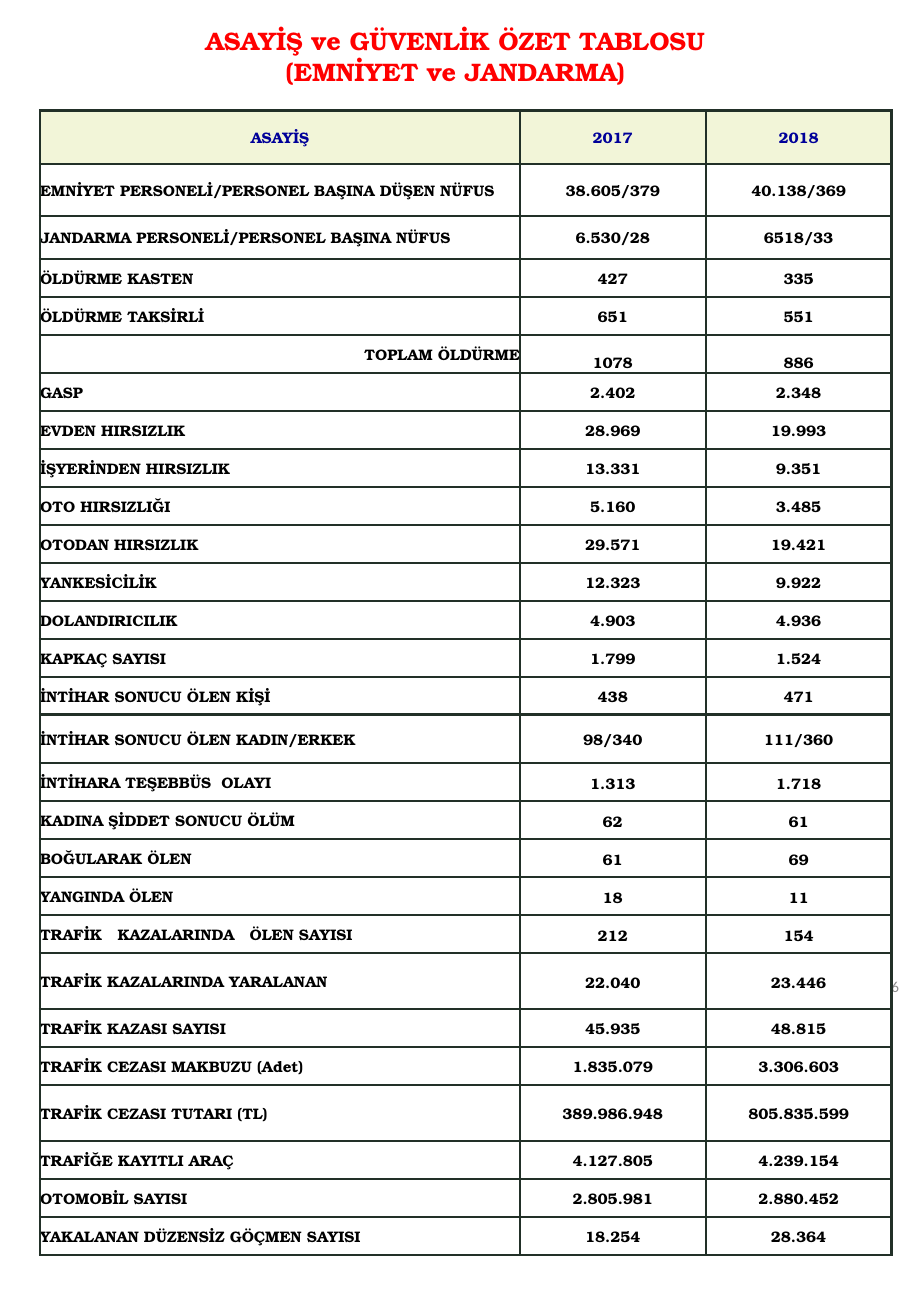
from lxml import etree
from pptx import Presentation
from pptx.dml.color import RGBColor
from pptx.enum.text import MSO_ANCHOR, PP_ALIGN
from pptx.oxml.ns import qn
from pptx.util import Inches, Pt

LEFT, CENTER, RIGHT = PP_ALIGN.LEFT, PP_ALIGN.CENTER, PP_ALIGN.RIGHT
MIDDLE, BOTTOM = MSO_ANCHOR.MIDDLE, MSO_ANCHOR.BOTTOM

RED = RGBColor(0xFF, 0x00, 0x00)
NAVY = RGBColor(0x00, 0x00, 0x99)
BLACK = RGBColor(0x00, 0x00, 0x00)
GRAY = RGBColor(0x8C, 0x8C, 0x8C)
WHITE = RGBColor(0xFF, 0xFF, 0xFF)
CREAM = RGBColor(0xF2, 0xF5, 0xD8)
BORDER = RGBColor(0x22, 0x30, 0x28)

SERIF, SANS = "TeX Gyre Bonum", "Calibri"
SLIDE_W, SLIDE_H = 7.5, 10.83
TABLE_X, TABLE_Y, TABLE_W, TABLE_H = 0.33, 0.91, 7.01, 9.42
VALUE_W = 1.53
TALL_ROWS = {0: 0.44, 1: 0.43, 2: 0.35, 15: 0.4, 21: 0.46, 24: 0.46}
TOTAL_ROW = 5
PADDED_ROWS = range(3, 27)

TITLE = ["ASAYİŞ ve GÜVENLİK ÖZET TABLOSU", "(EMNİYET ve JANDARMA)"]
ROWS = [
    ("ASAYİŞ", "2017", "2018"),
    ("EMNİYET PERSONELİ/PERSONEL BAŞINA DÜŞEN NÜFUS", "38.605/379", "40.138/369"),
    ("JANDARMA PERSONELİ/PERSONEL BAŞINA NÜFUS", "6.530/28", "6518/33"),
    ("ÖLDÜRME KASTEN", "427", "335"),
    ("ÖLDÜRME TAKSİRLİ", "651", "551"),
    ("TOPLAM ÖLDÜRME", "1078", "886"),
    ("GASP", "2.402", "2.348"),
    ("EVDEN HIRSIZLIK", "28.969", "19.993"),
    ("İŞYERİNDEN HIRSIZLIK", "13.331", "9.351"),
    ("OTO HIRSIZLIĞI", "5.160", "3.485"),
    ("OTODAN HIRSIZLIK", "29.571", "19.421"),
    ("YANKESİCİLİK", "12.323", "9.922"),
    ("DOLANDIRICILIK", "4.903", "4.936"),
    ("KAPKAÇ SAYISI", "1.799", "1.524"),
    ("İNTİHAR SONUCU ÖLEN KİŞİ", "438", "471"),
    ("İNTİHAR SONUCU ÖLEN KADIN/ERKEK", "98/340", "111/360"),
    ("İNTİHARA TEŞEBBÜS  OLAYI", "1.313", "1.718"),
    ("KADINA ŞİDDET SONUCU ÖLÜM", "62", "61"),
    ("BOĞULARAK ÖLEN", "61", "69"),
    ("YANGINDA ÖLEN", "18", "11"),
    ("TRAFİK   KAZALARINDA   ÖLEN SAYISI", "212", "154"),
    ("TRAFİK KAZALARINDA YARALANAN", "22.040", "23.446"),
    ("TRAFİK KAZASI SAYISI", "45.935", "48.815"),
    ("TRAFİK CEZASI MAKBUZU (Adet)", "1.835.079", "3.306.603"),
    ("TRAFİK CEZASI TUTARI (TL)", "389.986.948", "805.835.599"),
    ("TRAFİĞE KAYITLI ARAÇ", "4.127.805", "4.239.154"),
    ("OTOMOBİL SAYISI", "2.805.981", "2.880.452"),
    ("YAKALANAN DÜZENSİZ GÖÇMEN SAYISI", "18.254", "28.364"),
]


def style_paragraph(p, text, font, size, color, bold, align):
    p.text = text
    p.alignment = align
    p.font.name, p.font.size, p.font.bold = font, Pt(size), bold
    p.font.color.rgb = color


def add_text(slide, box, lines, font, size, color, bold, align):
    tf = slide.shapes.add_textbox(*map(Inches, box)).text_frame
    tf.word_wrap = True
    tf.vertical_anchor = MIDDLE
    tf.margin_top = tf.margin_bottom = 0
    for i, line in enumerate(lines):
        p = tf.add_paragraph() if i else tf.paragraphs[0]
        style_paragraph(p, line, font, size, color, bold, align)


def add_borders(cell):
    tc_pr = cell._tc.get_or_add_tcPr()
    for side in ("a:lnL", "a:lnR", "a:lnT", "a:lnB"):
        ln = etree.SubElement(tc_pr, qn(side), w=str(Pt(1.5)))
        fill = etree.SubElement(ln, qn("a:solidFill"))
        etree.SubElement(fill, qn("a:srgbClr"), val=str(BORDER))


def fill_cell(cell, text, row, col):
    header, total = row == 0, row == TOTAL_ROW
    add_borders(cell)
    cell.fill.solid()
    cell.fill.fore_color.rgb = CREAM if header else WHITE
    pad = Inches(0.01 if col and row in PADDED_ROWS else 0)
    cell.margin_left = cell.margin_right = cell.margin_top = pad
    cell.margin_bottom = 0
    cell.vertical_anchor = BOTTOM if total and col else MIDDLE
    align = CENTER if header or col else RIGHT if total else LEFT
    color = NAVY if header else BLACK
    style_paragraph(cell.text_frame.paragraphs[0], text, SERIF, 9, color, True, align)


def add_summary_table(slide):
    box = map(Inches, (TABLE_X, TABLE_Y, TABLE_W, TABLE_H))
    table = slide.shapes.add_table(len(ROWS), len(ROWS[0]), *box).table
    table.first_row = table.horz_banding = False
    for column, width in zip(table.columns, (TABLE_W - 2 * VALUE_W, VALUE_W, VALUE_W)):
        column.width = Inches(width)
    row_h = (TABLE_H - sum(TALL_ROWS.values())) / (len(ROWS) - len(TALL_ROWS))
    for i, texts in enumerate(ROWS):
        table.rows[i].height = Inches(TALL_ROWS.get(i, row_h))
        for j, text in enumerate(texts):
            fill_cell(table.cell(i, j), text, i, j)


def main():
    prs = Presentation()
    prs.slide_width, prs.slide_height = Inches(SLIDE_W), Inches(SLIDE_H)
    slide = prs.slides.add_slide(prs.slide_layouts[6])
    add_text(slide, (0, 0.2, SLIDE_W, 0.52), TITLE, SERIF, 15, RED, True, CENTER)
    add_text(slide, (5.82, 8.02, 1.68, 0.2), ["6"], SANS, 9, GRAY, False, RIGHT)
    add_summary_table(slide)
    prs.save("out.pptx")


if __name__ == "__main__":
    main()
